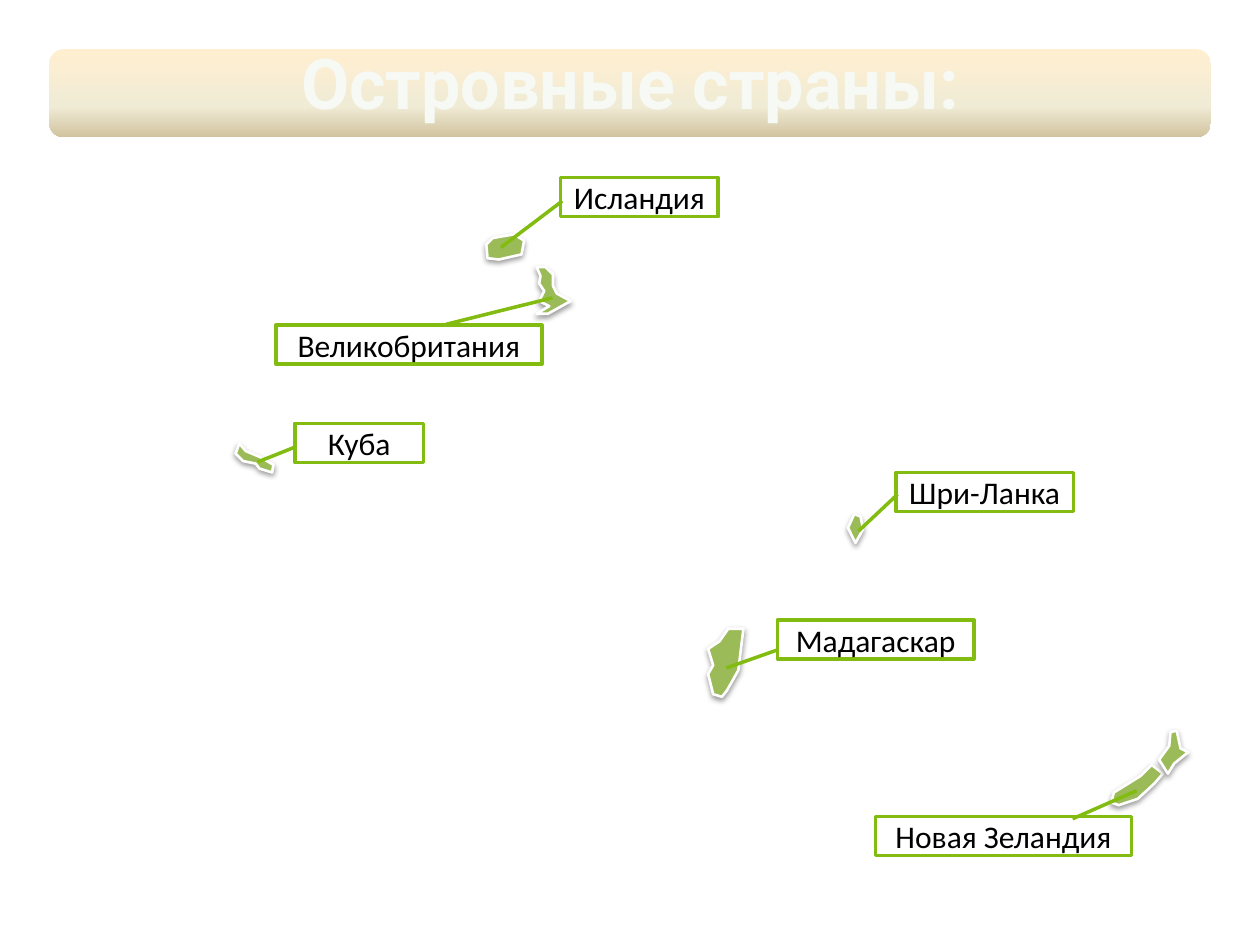
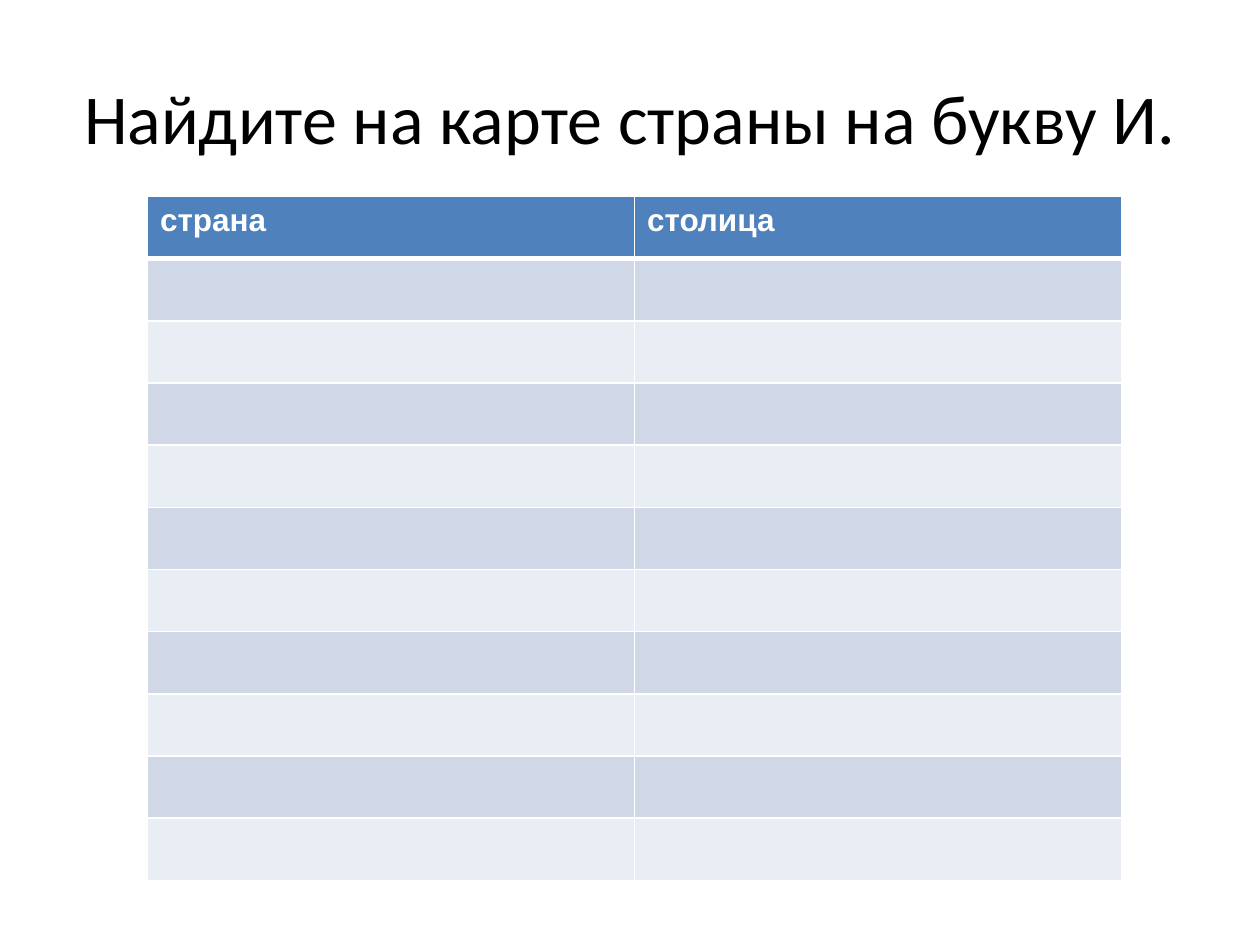
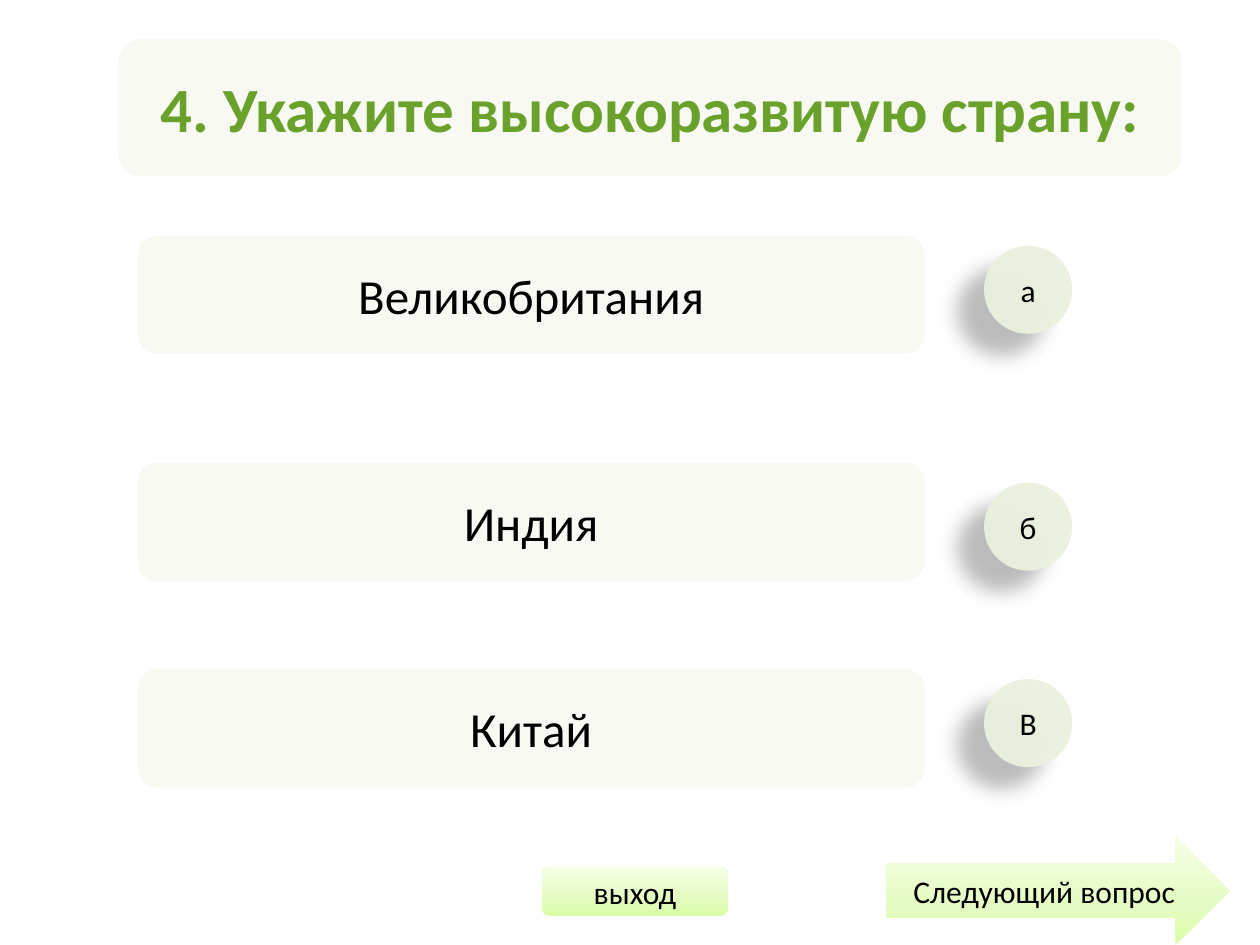
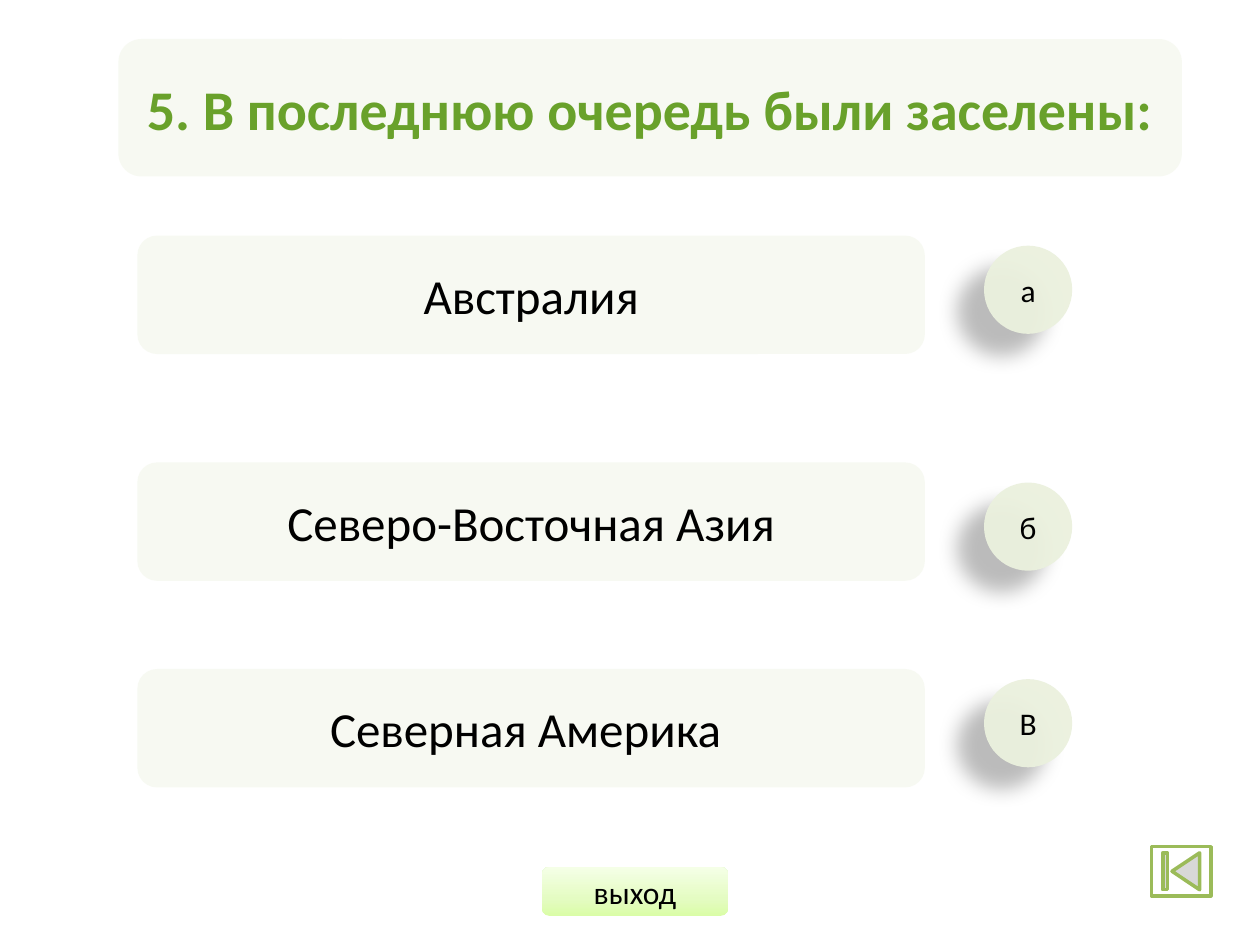
from pptx import Presentation
from pptx import util as u
from pptx.dml.color import RGBColor
from pptx.enum import shapes, text
from pptx.oxml import parse_xml
from pptx.oxml.ns import nsdecls, qn

PX = 9144
KIND = shapes.MSO_SHAPE
NS = nsdecls("a")
HUES = {
    "black": "000000", "white": "FFFFFF", "land": "9BBB59", "lime": "83BC10",
    "pale": "EBF1DE", "quiz": "69A12B", "head": "4F81BD", "odd": "D0D8E8",
    "even": "E9EDF4", "glow": "ACEC28", "rim": "F7F9F5",
    "sand": "FFEFD1", "cream": "F0EBD5", "clay": "D1C39F",
    "mint": "DAFDA7", "leaf": "E4FCC2", "mist": "F5FFE7",
}
SAND = (90, 65, ("sand", "cream", "clay"))
MINT = (270, 35, ("mint", "leaf", "mist"))
COAST = (38, 3.1, 1.6, 90)
DROP = (28, 11.8, 19.7, 141)

LANDS = {
    "Madagascar": [
        (562, 535), (566, 528), (562, 515), (571, 509), (578, 499),
        (590, 499), (586, 532), (577, 548), (573, 553), (566, 551)],
    "Iceland": [
        (387, 205), (386, 194), (391, 189), (408, 186), (416, 191),
        (414, 202), (396, 206)],
    "Britain": [
        (453, 239), (442, 233), (439, 227), (439, 218), (433, 212),
        (426, 212), (429, 219), (428, 225), (432, 231), (428, 239),
        (436, 243), (426, 249), (435, 249)],
    "Cuba": [
        (187, 360), (190, 352), (195, 358), (207, 363), (217, 369),
        (216, 375), (206, 372), (203, 368), (193, 366)],
    "South": [
        (882, 637), (884, 629), (905, 616), (914, 607), (923, 614),
        (916, 622), (903, 634), (888, 639)],
    "North": [
        (925, 611), (920, 603), (928, 592), (929, 581), (934, 580),
        (937, 594), (943, 597), (932, 606), (927, 614)],
    "Lanka": [
        (673, 419), (678, 408), (683, 410), (685, 420), (679, 431)],
}

NOTES = [
    ("Новая Зеландия", 695, 648, 203, (0.06, 0.77, -0.66, 1.02)),
    ("Мадагаскар", 617, 492, 156, (0.77, 0, 1.23, -0.26)),
    ("Шри-Ланка", 711, 375, 141, (0.56, 0.01, 1.5, -0.21)),
    ("Куба", 234, 336, 102, (0.61, 0, 0.99, -0.29)),
    ("Исландия", 445, 141, 125, (0.6, 0.01, 1.79, -0.38)),
    ("Великобритания", 219, 258, 211, (-0.02, 0.64, -0.7, 1.04)),
]


def size(*px):
    return [n * PX for n in px]


def tint(hue):
    return RGBColor.from_string(HUES[hue])


def fade(owner, alpha):
    owner.find(".//" + qn("a:srgbClr")).append(
        parse_xml(f'<a:alpha {NS} val="{alpha * 1000}"/>'))


def paint(shape, hue, alpha=100):
    shape.fill.solid()
    shape.fill.fore_color.rgb = tint(hue)
    if alpha < 100:
        fade(shape._element.spPr, alpha)


def blend(shape, ramp):
    angle, middle, hues = ramp
    marks = "".join(
        f'<a:gs pos="{at * 1000}"><a:srgbClr val="{HUES[hue]}"/></a:gs>'
        for at, hue in zip((0, middle, 100), hues))
    shape.fill.background()
    props = shape._element.spPr
    props.replace(props.find(qn("a:noFill")), parse_xml(
        f'<a:gradFill {NS} rotWithShape="1"><a:gsLst>{marks}</a:gsLst>'
        f'<a:lin ang="{angle * 60000}" scaled="0"/></a:gradFill>'))


def edge(shape, hue=None, width=2):
    if hue:
        shape.line.color.rgb = tint(hue)
        shape.line.width = u.Pt(width)
    else:
        shape.line.fill.background()


def shade(shape, alpha, blur, dist, angle):
    shape._element.spPr.effectLst.append(parse_xml(
        f'<a:outerShdw {NS} blurRad="{u.Pt(blur)}" dist="{u.Pt(dist)}" '
        f'dir="{angle * 60000}" algn="ctr" rotWithShape="0"><a:srgbClr val="{HUES["black"]}">'
        f'<a:alpha val="{alpha * 1000}"/></a:srgbClr></a:outerShdw>'))


def style(para, points, hue="black", bold=False, face="Calibri"):
    for run in para.runs:
        run.font.size = u.Pt(points)
        run.font.name = face
        run.font.bold = bold
        run.font.color.rgb = tint(hue)


def write(shape, words, points, **look):
    frame = shape.text_frame
    frame.text = words
    frame.word_wrap = True
    frame.vertical_anchor = text.MSO_ANCHOR.MIDDLE
    frame.margin_left = frame.margin_right = 5 * PX
    para = frame.paragraphs[0]
    para.alignment = text.PP_ALIGN.CENTER
    style(para, points, **look)
    return para


def form(slide, kind, box):
    shape = slide.shapes.add_shape(kind, *size(*box))
    shape.shadow.inherit = False
    edge(shape)
    return shape


def panel(slide, box, words, points, **look):
    shape = form(slide, KIND.ROUNDED_RECTANGLE, box)
    paint(shape, "pale", 38)
    write(shape, words, points, **look)


def button(slide, kind, box, words):
    shape = form(slide, kind, box)
    blend(shape, MINT)
    write(shape, words, 18)


def land(slide, name):
    first, *rest = LANDS[name]
    pen = slide.shapes.build_freeform(*first, scale=PX)
    pen.add_line_segments(rest, close=True)
    shape = pen.convert_to_shape()
    shape.shadow.inherit = False
    paint(shape, "land")
    edge(shape, "white", 1.5)
    shade(shape, *COAST)
    return shape


def note(slide, words, left, top, width, bends):
    shape = form(slide, KIND.LINE_CALLOUT_1, (left, top, width, 31))
    for i, bend in enumerate(bends):
        shape.adjustments[i] = bend
    paint(shape, "white")
    edge(shape, "lime")
    write(shape, words, 18)


def banner(slide, words):
    shape = form(slide, KIND.ROUNDED_RECTANGLE, (39, 39, 922, 70))
    blend(shape, SAND)
    para = write(shape, words, 40, hue="glow", bold=True, face="Roboto")
    para.line_spacing = 0.65
    props = para.runs[0].font._element
    fade(props, 50)
    props.insert(0, parse_xml(
        f'<a:ln {NS} w="{u.Pt(2.3)}"><a:solidFill><a:srgbClr val="{HUES["rim"]}"/>'
        '</a:solidFill></a:ln>'))


def border(cell, **widths):
    props = cell._tc.get_or_add_tcPr()
    for i, (side, width) in enumerate(widths.items()):
        props.insert(i, parse_xml(
            f'<a:ln{side} {NS} w="{u.Pt(width)}"><a:solidFill>'
            f'<a:srgbClr val="{HUES["white"]}"/></a:solidFill></a:ln{side}>'))


def grid(slide, box, heads, count):
    table = slide.shapes.add_table(count, len(heads), *size(*box)).table
    for r in range(count):
        for c, head in enumerate(heads):
            cell = table.cell(r, c)
            cell.fill.solid()
            cell.fill.fore_color.rgb = tint("head" if r == 0 else "odd" if r % 2 else "even")
            border(cell, L=1, R=1, T=3 if r == 1 else 1, B=3 if r == 0 else 1)
            if r == 0:
                cell.text = head
                style(cell.text_frame.paragraphs[0], 18, "white", True, "Arial")


def quiz(slide, ask, points, picks):
    for top, mark in zip((195, 383, 539), "абВ"):
        dot = form(slide, KIND.OVAL, (781, top, 70, 70))
        paint(dot, "pale", 95)
        shade(dot, *DROP)
        write(dot, mark, 18)
    for top, pick in zip((187, 367, 531), picks):
        panel(slide, (109, top, 625, 94), pick, 28)
    panel(slide, (94, 31, 844, 109), ask, points, hue="quiz", bold=True)
    button(slide, KIND.ROUNDED_RECTANGLE, (430, 688, 148, 39), "выход")


def isles(slide):
    banner(slide, "Островные страны:")
    for name in ("Madagascar", "Iceland", "Britain", "Cuba"):
        land(slide, name)
    slide.shapes.add_group_shape([land(slide, "South"), land(slide, "North")])
    land(slide, "Lanka")
    for item in NOTES:
        note(slide, *item)


def search(slide):
    title = slide.shapes.add_textbox(*size(50, 30, 900, 125))
    write(title, "Найдите на карте страны на букву И.", 40)
    grid(slide, (117, 156, 773, 543), ("страна", "столица"), 11)


def main():
    deck = Presentation()
    deck.slide_width, deck.slide_height = size(1000, 750)
    one, two, three, four = [deck.slides.add_slide(deck.slide_layouts[6]) for _ in range(4)]
    isles(one)
    search(two)
    quiz(three, "4. Укажите высокоразвитую страну:", 36,
         ("Великобритания", "Индия", "Китай"))
    button(three, KIND.RIGHT_ARROW, (703, 664, 273, 86), "Следующий вопрос")
    quiz(four, "5. В последнюю очередь были заселены:", 32,
         ("Австралия", "Северо-Восточная Азия", "Северная Америка "))
    back = form(four, KIND.ACTION_BUTTON_BEGINNING, (914, 672, 47, 39))
    paint(back, "white", 38)
    edge(back, "land")
    deck.save("out.pptx")


if __name__ == "__main__":
    main()
